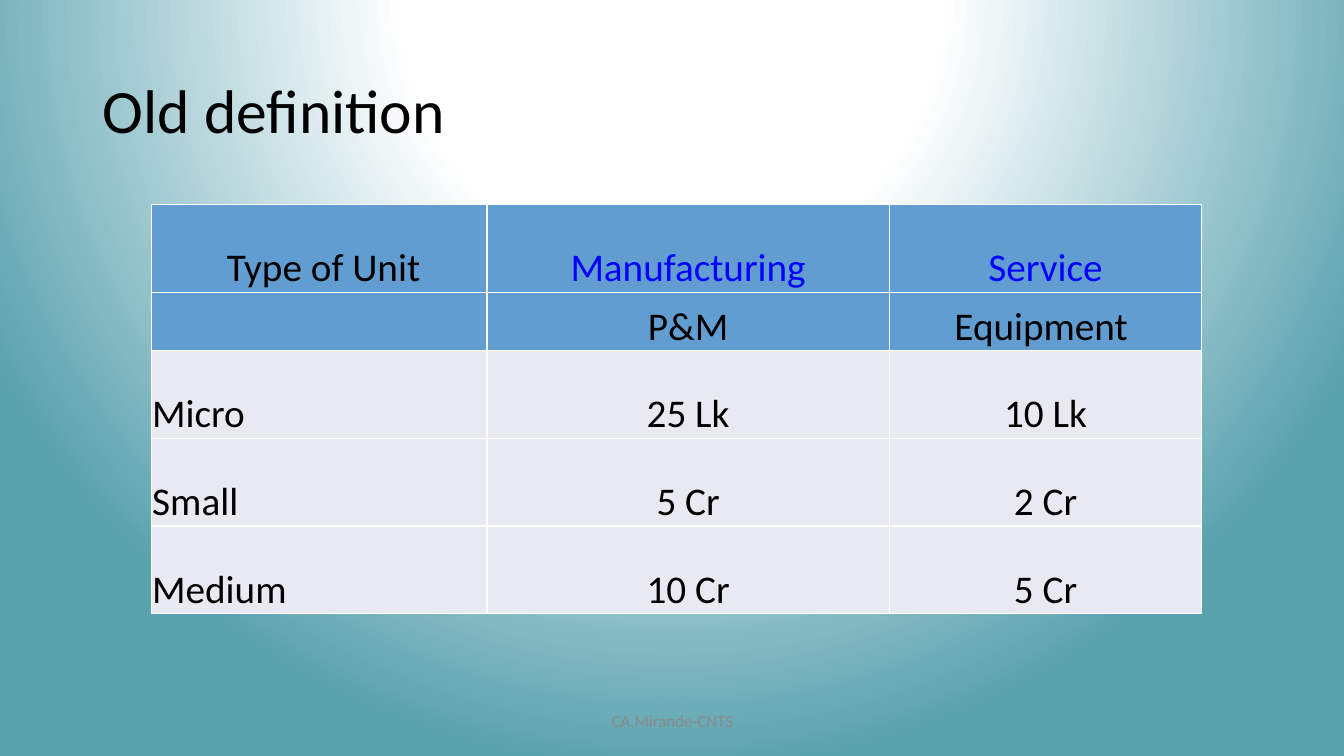
from dataclasses import dataclass

from pptx import Presentation, util as u
from pptx.dml.color import RGBColor
from pptx.enum import text as t
from pptx.oxml import parse_xml
from pptx.oxml.ns import nsdecls

COLORS = {"black": "000000", "white": "FFFFFF", "teal": "5AA2AE", "link": "0000FF",
          "header": "629DD1", "body": "E9EAF1", "footer": "8B8B8B"}
FONT = "Calibri"


@dataclass
class UnitRow:
    texts: tuple[str, str, str]
    height: float
    fill: str = "body"
    first_align: t.PP_ALIGN = t.PP_ALIGN.LEFT
    value_color: str = "black"


UNIT_ROWS = [
    UnitRow((" Type of Unit", "Manufacturing", "Service"), 0.87, "header",
            t.PP_ALIGN.CENTER, "link"),
    UnitRow(("", "P&M", "Equipment "), 0.58, "header"),
    UnitRow(("Micro", "25 Lk", "10 Lk"), 0.87),
    UnitRow(("Small", "5 Cr", "2 Cr"), 0.87),
    UnitRow(("Medium", "10 Cr", "5 Cr"), 0.87),
]
COLUMN_WIDTHS = (3.33, 3.99, 3.1)


def put_text(frame, words: str, *, size: float, color: str = "black",
             align: t.PP_ALIGN = t.PP_ALIGN.LEFT, spacing: float = 1.0) -> None:
    paragraph = frame.paragraphs[0]
    paragraph.alignment = align
    paragraph.line_spacing = spacing
    run = paragraph.add_run()
    run.text = words
    run.font.size = u.Pt(size)
    run.font.name = FONT
    run.font.color.rgb = RGBColor.from_string(COLORS[color])


def paint_background(slide) -> None:
    slide.background.fill.solid()
    properties = slide.background._cSld.bg.bgPr
    stops = "".join(
        f'<a:gs pos="{percent * 1000}"><a:srgbClr val="{COLORS[color]}"/></a:gs>'
        for percent, color in ((0, "white"), (35, "white"), (100, "teal")))
    glow = parse_xml(
        f'<a:gradFill {nsdecls("a")} rotWithShape="1"><a:gsLst>{stops}</a:gsLst>'
        '<a:path path="circle"><a:fillToRect l="50000" t="-80000" r="50000" b="180000"/>'
        '</a:path></a:gradFill>')
    properties.replace(properties[0], glow)


def add_borders(cell) -> None:
    cell_properties = cell._tc.get_or_add_tcPr()
    for side in "LRTB":
        cell_properties.append(parse_xml(
            f'<a:ln{side} {nsdecls("a")} w="12700"><a:solidFill>'
            f'<a:srgbClr val="{COLORS["white"]}"/></a:solidFill></a:ln{side}>'))


def add_unit_table(slide) -> None:
    units = slide.shapes.add_table(
        len(UNIT_ROWS), len(COLUMN_WIDTHS), u.Inches(1.5), u.Inches(2.03),
        u.Inches(sum(COLUMN_WIDTHS)), u.Inches(sum(row.height for row in UNIT_ROWS))).table
    units.first_row = units.horz_banding = False
    for column, width in zip(units.columns, COLUMN_WIDTHS):
        column.width = u.Inches(width)
    for r, row in enumerate(UNIT_ROWS):
        units.rows[r].height = u.Inches(row.height)
        for c, words in enumerate(row.texts):
            cell = units.cell(r, c)
            cell.margin_left = cell.margin_right = cell.margin_top = u.Inches(0.01)
            cell.margin_bottom = 0
            cell.vertical_anchor = t.MSO_ANCHOR.BOTTOM
            add_borders(cell)
            cell.fill.solid()
            cell.fill.fore_color.rgb = RGBColor.from_string(COLORS[row.fill])
            if words:
                put_text(cell.text_frame, words, size=28,
                         color=row.value_color if c else "black",
                         align=t.PP_ALIGN.CENTER if c else row.first_align)


def main() -> None:
    deck = Presentation()
    deck.slide_width, deck.slide_height = u.Inches(13.33), u.Inches(7.5)
    slide = deck.slides.add_slide(deck.slide_layouts[5])
    paint_background(slide)

    # Title
    title = slide.shapes.title
    title.left, title.top = u.Inches(0.92), u.Inches(0.4)
    title.width, title.height = u.Inches(11.5), u.Inches(1.45)
    title.text_frame.vertical_anchor = t.MSO_ANCHOR.MIDDLE
    put_text(title.text_frame, "Old definition", size=44, spacing=0.9)

    # Limits by type of unit
    add_unit_table(slide)

    # Footer
    footer = slide.shapes.add_textbox(u.Inches(4.42), u.Inches(6.95),
                                      u.Inches(4.5), u.Inches(0.4)).text_frame
    footer.word_wrap = True
    footer.vertical_anchor = t.MSO_ANCHOR.MIDDLE
    put_text(footer, "CA.Mirande-CNTS", size=12, color="footer", align=t.PP_ALIGN.CENTER)

    deck.save("out.pptx")


if __name__ == "__main__":
    main()
